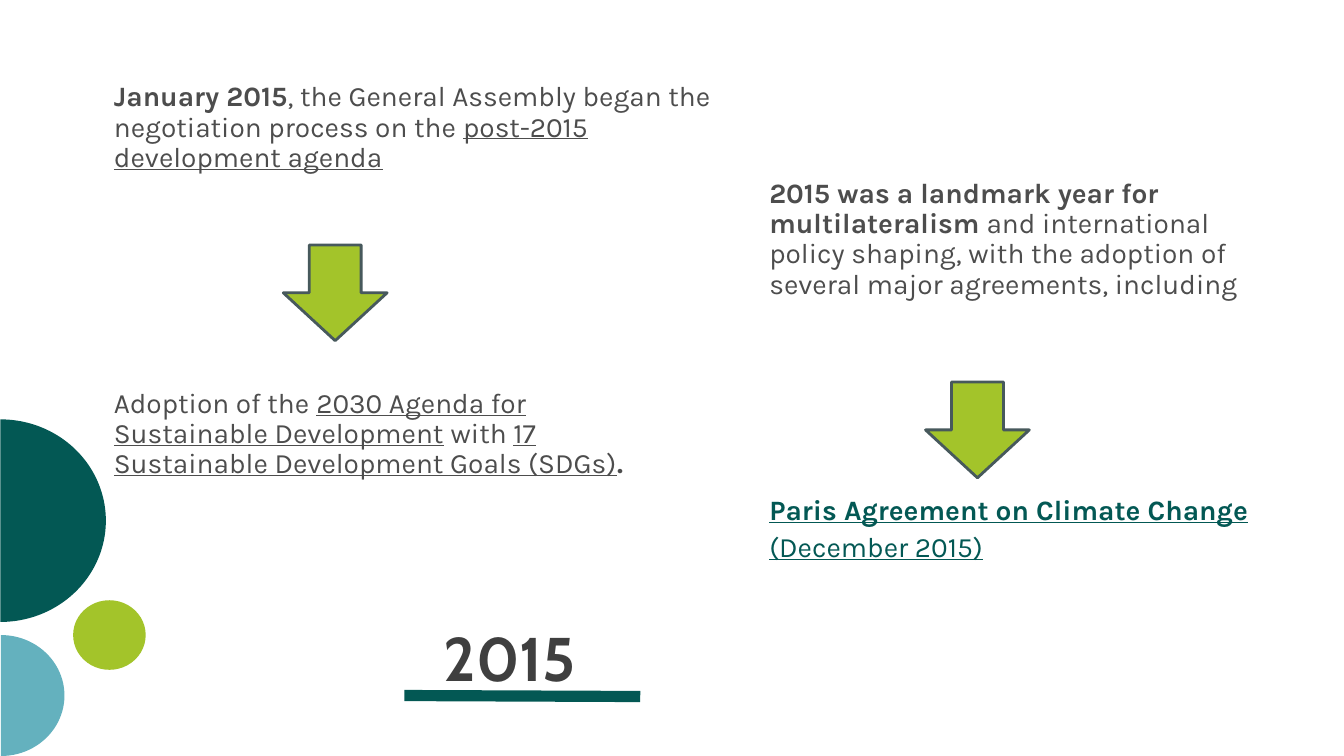
from dataclasses import dataclass

import pptx
import pptx.dml.color
import pptx.enum.shapes
import pptx.enum.text
import pptx.oxml
import pptx.util
from pptx.util import Inches

SHAPE = pptx.enum.shapes.MSO_SHAPE
ANCHOR = pptx.enum.text.MSO_ANCHOR


@dataclass(frozen=True)
class Theme:
    teal: str = "035854"
    blue: str = "64B1BE"
    lime: str = "A3C42A"
    slate: str = "47595C"
    dark: str = "3F3F3F"
    grey: str = "4D4D4D"
    head: str = "Cabin"
    body: str = "Karla"
    big: int = 44
    size: int = 20


THEME = Theme()


def rgb(code):
    return pptx.dml.color.RGBColor.from_string(code)


def add_shape(slide, kind, box, fill, line=None):
    shape = slide.shapes.add_shape(kind, *map(Inches, box))
    shape.shadow.inherit = False
    shape.fill.solid()
    shape.fill.fore_color.rgb = rgb(fill)
    if line:
        shape.line.color.rgb = rgb(line)
        shape.line.width = pptx.util.Pt(2)
    else:
        shape.line.fill.background()
    return shape


def add_half(slide, box, fill):
    """Draw the right half of a disc."""
    half = add_shape(slide, SHAPE.PIE, box, fill)
    half.adjustments[0] = 0
    half.adjustments[1] = 108
    half.rotation = 270


def add_arrow(slide, left, top):
    add_shape(slide, SHAPE.DOWN_ARROW, (left, top, 1.03, 0.95),
              THEME.lime, THEME.slate)


def add_rule(slide, start, end):
    rule = slide.shapes.add_connector(
        pptx.enum.shapes.MSO_CONNECTOR.STRAIGHT, *map(Inches, start + end))
    rule.line.color.rgb = rgb(THEME.teal)
    rule.line.width = pptx.util.Pt(8)
    rule._element.spPr.append(pptx.oxml.parse_xml(
        '<a:effectLst xmlns:a='
        '"http://schemas.openxmlformats.org/drawingml/2006/main"/>'))


def add_frame(slide, box, pads, anchor=ANCHOR.TOP):
    """Add a wrapping text box; pads are left, top, right, bottom."""
    frame = slide.shapes.add_textbox(*map(Inches, box)).text_frame
    frame.word_wrap = True
    frame.vertical_anchor = anchor
    (frame.margin_left, frame.margin_top,
     frame.margin_right, frame.margin_bottom) = map(Inches, pads)
    return frame


def fill_para(para, runs, color=THEME.grey, face=THEME.body,
              size=THEME.size, space=0.9, indent=0.25):
    """Add (text, style) runs, where style holds b for bold, u for underline."""
    props = para._p.get_or_add_pPr()
    props.set("marL", str(Inches(indent)))
    props.set("indent", "0")
    para.line_spacing = space
    for text, style in runs:
        run = para.add_run()
        run.text = text
        font = run.font
        font.name = face
        font.size = pptx.util.Pt(size)
        font.color.rgb = rgb(color)
        font.bold = "b" in style
        font.underline = "u" in style


def add_decor(slide):
    add_rule(slide, (4.01, 6.9), (6.35, 6.91))
    add_half(slide, (-1, 4.12, 2.01, 2.09), THEME.teal)
    add_half(slide, (-0.59, 6.27, 1.2, 1.26), THEME.blue)
    dot = add_shape(slide, SHAPE.OVAL, (0.74, 5.94, 0.69, 0.72), THEME.lime)
    dot.rotation = 270


def add_texts(slide):
    year = add_frame(slide, (4.4, 5.83, 2.4, 1.51), (0, 0, 0, 0),
                     ANCHOR.MIDDLE)
    fill_para(year.paragraphs[0], [("2015", "b")], THEME.dark, THEME.head,
              THEME.big, space=0.8, indent=0)

    start = add_frame(slide, (0.88, 0.52, 6.55, 2.41), (0, 0.3, 0.1, 0.05))
    fill_para(start.paragraphs[0], [
        ("January 2015", "b"),
        (", the General Assembly began the negotiation process on the ", ""),
        ("post-2015 development agenda", "u")])

    pacts = add_frame(slide, (7.38, 1.73, 5.32, 4.1), (0, 0.05, 0.1, 0.05))
    fill_para(pacts.paragraphs[0], [
        ("2015 was a landmark year for multilateralism", "b"),
        (" and international policy shaping, with the adoption of several "
         "major agreements, including", "")])
    paris = pacts.add_paragraph()
    paris.space_before = pptx.util.Pt(135)
    fill_para(paris, [("Paris Agreement on Climate Change ", "bu"),
                      ("(December 2015)", "u")], THEME.teal, space=1.1)

    goals = add_frame(slide, (0.78, 3.81, 6.12, 1.01), (0.1, 0.05, 0.1, 0.05))
    fill_para(goals.paragraphs[0], [
        ("Adoption of the ", ""),
        ("2030 Agenda for Sustainable Development", "u"),
        (" with ", ""),
        ("17 Sustainable Development Goals (SDGs)", "u"),
        (".", "b")])


def main():
    deck = pptx.Presentation()
    deck.slide_width = Inches(13.33)
    deck.slide_height = Inches(7.5)
    slide = deck.slides.add_slide(deck.slide_layouts[6])
    add_decor(slide)
    add_texts(slide)
    add_arrow(slide, 2.81, 2.43)
    add_arrow(slide, 9.18, 3.79)
    deck.save("out.pptx")


if __name__ == "__main__":
    main()
